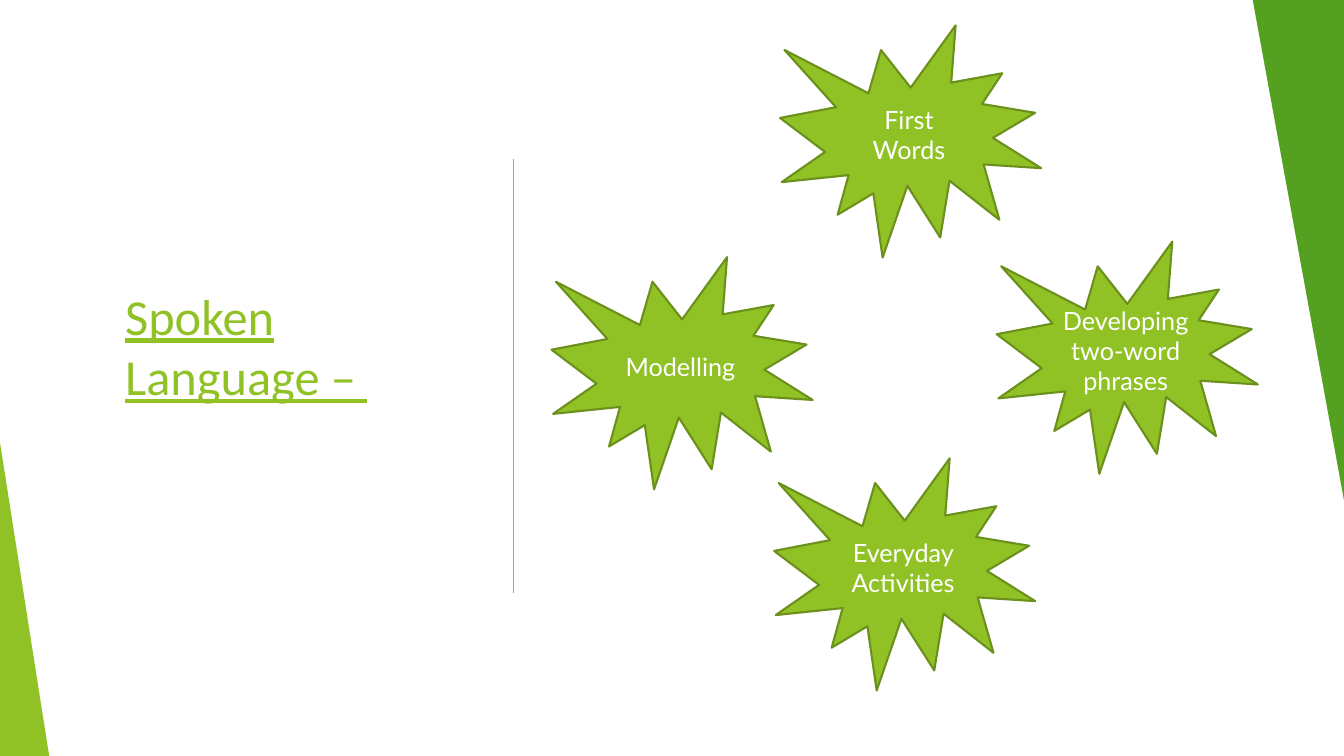
"""Build the Spoken Language slide with four starburst topics."""
from pptx import Presentation
from pptx.dml.color import RGBColor
from pptx.enum.shapes import MSO_CONNECTOR, MSO_SHAPE
from pptx.enum.text import MSO_ANCHOR, MSO_AUTO_SIZE, MSO_UNDERLINE, PP_ALIGN
from pptx.oxml import parse_xml
from pptx.util import Cm, Pt

GREEN = RGBColor(0x90, 0xC2, 0x26)
DARK_GREEN = RGBColor(0x54, 0xA0, 0x21)
OUTLINE = RGBColor(0x6B, 0x90, 0x1C)
GREY = RGBColor(0xA0, 0xA0, 0xA0)
WHITE = RGBColor(0xFF, 0xFF, 0xFF)
DRAWING_NS = "http://schemas.openxmlformats.org/drawingml/2006/main"


def write(tf, text, font="Lato", size=18, color=WHITE, align=PP_ALIGN.CENTER, underline=None):
    tf.word_wrap = True
    tf.auto_size = MSO_AUTO_SIZE.NONE
    tf.vertical_anchor = MSO_ANCHOR.MIDDLE
    p = tf.paragraphs[0]
    p.alignment = align
    r = p.add_run()
    r.text = text
    r.font.name = font
    r.font.size = Pt(size)
    r.font.color.rgb = color
    r.font.underline = underline


prs = Presentation()
prs.slide_width, prs.slide_height = Cm(33.87), Cm(19.05)
s = prs.slides.add_slide(prs.slide_layouts[5])

title = s.shapes.title
title.left, title.top, title.width, title.height = Cm(2.9), Cm(3.28), Cm(9.17), Cm(12.4)
title.text_frame.margin_bottom = Cm(1.67)
write(title.text_frame, "Spoken Language – ", font="Calibri", size=36, color=GREEN,
      align=PP_ALIGN.LEFT, underline=MSO_UNDERLINE.SINGLE_LINE)

for left, top, width, height, rotation, color in [
    (0, 11.15, 1.24, 7.9, 0, GREEN),
    (31.57, 0, 2.34, 12.83, 180, DARK_GREEN),
]:
    sp = s.shapes.add_shape(MSO_SHAPE.ISOSCELES_TRIANGLE, Cm(left), Cm(top), Cm(width), Cm(height))
    sp.adjustments[0] = 0
    sp.rotation = rotation
    sp.shadow.inherit = False
    sp.fill.solid()
    sp.fill.fore_color.rgb = color
    sp.line.fill.background()

divider = s.shapes.add_connector(MSO_CONNECTOR.STRAIGHT, Cm(12.94), Cm(4), Cm(12.94), Cm(14.94))
divider.line.color.rgb = GREY
divider.line.width = Pt(0.75)
divider._element.spPr.append(parse_xml(f'<a:effectLst xmlns:a="{DRAWING_NS}"/>'))

for text, left, top in [
    ("First Words", 19.66, 0.64),
    ("Modelling", 13.9, 6.48),
    ("Developing two-word phrases", 25.12, 6.09),
    ("Everyday Activities", 19.51, 11.55),
]:
    sp = s.shapes.add_shape(MSO_SHAPE.EXPLOSION1, Cm(left), Cm(top), Cm(6.58), Cm(5.85))
    sp.shadow.inherit = False
    sp.fill.solid()
    sp.fill.fore_color.rgb = GREEN
    sp.line.color.rgb = OUTLINE
    sp.line.width = Pt(1.5)
    write(sp.text_frame, text)

prs.save("out.pptx")
